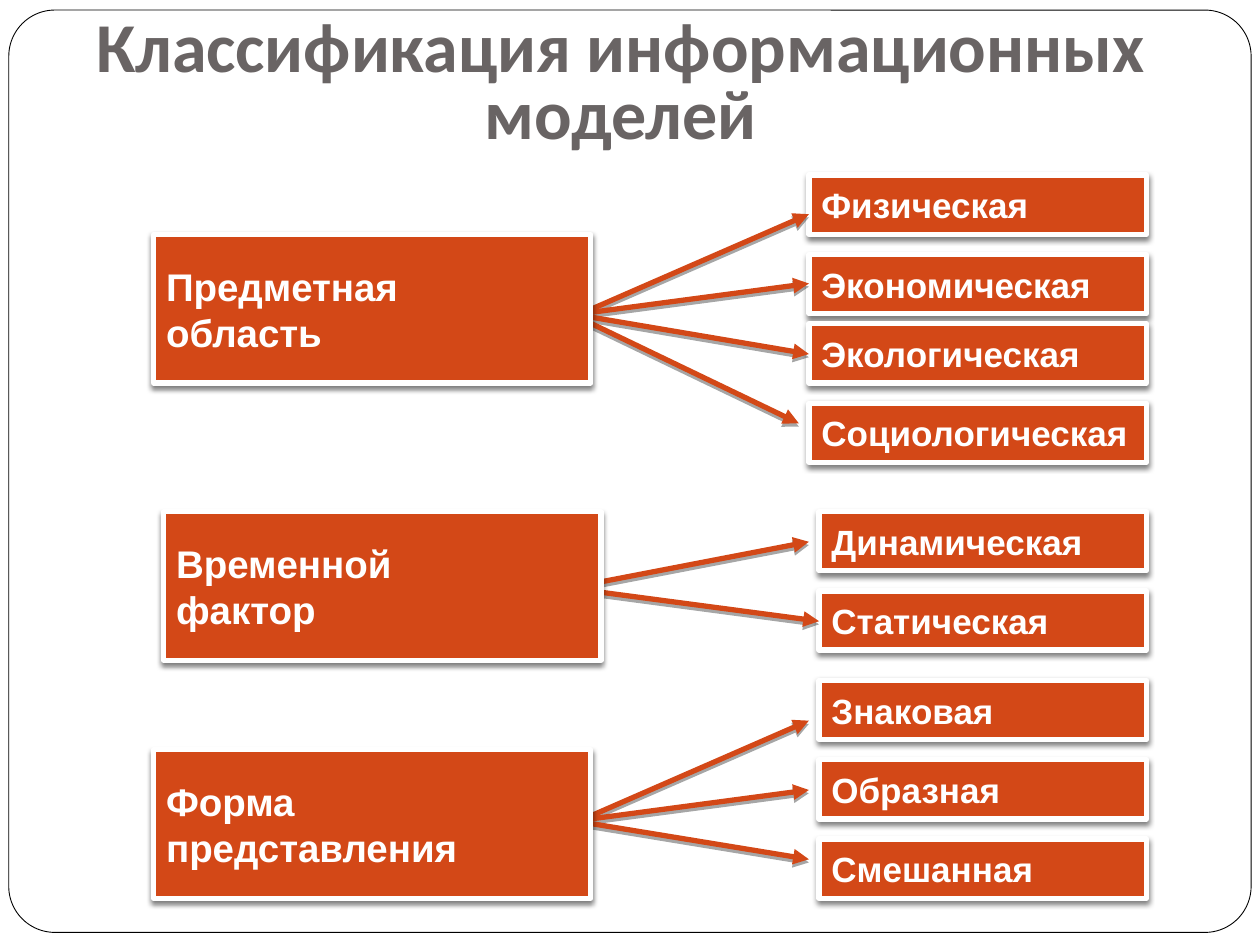
from dataclasses import dataclass

import pptx
import pptx.dml.color
import pptx.enum.shapes
import pptx.enum.text
import pptx.oxml
import pptx.oxml.ns
import pptx.util

Inches = pptx.util.Inches
Pt = pptx.util.Pt
RGBColor = pptx.dml.color.RGBColor
MSO_SHAPE = pptx.enum.shapes.MSO_SHAPE

ORANGE = RGBColor(0xD3, 0x48, 0x17)
WHITE = RGBColor(0xFF, 0xFF, 0xFF)
BLACK = RGBColor(0x00, 0x00, 0x00)
GRAY = RGBColor(0x69, 0x64, 0x64)

CATEGORY_WIDTH, CATEGORY_HEIGHT = 3.47, 1.18
MODEL_RIGHT, MODEL_HEIGHT = 9.1, 0.47


@dataclass(frozen=True)
class Model:
    name: str
    top: float
    arrow_tip: tuple[float, float]
    arrow_start: tuple[float, float]


@dataclass(frozen=True)
class Category:
    lines: tuple[str, ...]
    left: float
    top: float
    models_left: float
    models: tuple[Model, ...]


CATEGORIES = (
    Category(("Предметная", "область"), 1.22, 1.86, 6.42, (
        Model("Физическая", 1.39, (6.42, 1.7), (4.61, 2.49)),
        Model("Экономическая", 2.02, (6.42, 2.25), (4.61, 2.49)),
        Model("Экологическая", 2.57, (6.42, 2.81), (4.53, 2.49)),
        Model("Социологическая", 3.2, (6.34, 3.36), (4.53, 2.49)),
    )),
    Category(("Временной", "фактор"), 1.3, 4.06, 6.5, (
        Model("Динамическая", 4.06, (6.42, 4.3), (4.76, 4.62)),
        Model("Статическая", 4.69, (6.5, 4.93), (4.69, 4.69)),
    )),
    Category(("Форма", "представления"), 1.22, 5.95, 6.5, (
        Model("Знаковая", 5.4, (6.42, 5.72), (4.61, 6.51)),
        Model("Образная", 6.03, (6.42, 6.27), (4.61, 6.51)),
        Model("Смешанная", 6.66, (6.42, 6.82), (4.53, 6.51)),
    )),
)


def add_shadow(shape, blur: float, distance: float, opacity: int) -> None:
    namespace = pptx.oxml.ns.nsdecls("a")
    effects = pptx.oxml.parse_xml(
        f'<a:effectLst {namespace}><a:outerShdw blurRad="{Pt(blur)}" '
        f'dist="{Pt(distance)}" dir="5400000" rotWithShape="0">'
        f'<a:srgbClr val="{BLACK}"><a:alpha val="{opacity * 1000}"/></a:srgbClr>'
        "</a:outerShdw></a:effectLst>"
    )
    shape._element.spPr.append(effects)


def add_box(slide, lines: tuple[str, ...], left: float, top: float,
            width: float, height: float, size: int) -> None:
    box = slide.shapes.add_shape(
        MSO_SHAPE.RECTANGLE, Inches(left), Inches(top), Inches(width), Inches(height))
    box.fill.solid()
    box.fill.fore_color.rgb = ORANGE
    box.line.color.rgb = WHITE
    box.line.width = Pt(3)
    add_shadow(box, blur=3, distance=2, opacity=50)
    frame = box.text_frame
    frame.word_wrap = True
    frame.vertical_anchor = pptx.enum.text.MSO_ANCHOR.MIDDLE
    frame.text = "\n".join(lines)
    for paragraph in frame.paragraphs:
        paragraph.alignment = pptx.enum.text.PP_ALIGN.LEFT
        paragraph.font.name = "Arial"
        paragraph.font.size = Pt(size)
        paragraph.font.bold = True
        paragraph.font.color.rgb = WHITE


def add_arrow(slide, start: tuple[float, float], tip: tuple[float, float]) -> None:
    arrow = slide.shapes.add_connector(
        pptx.enum.shapes.MSO_CONNECTOR.STRAIGHT,
        *(Inches(value) for value in (*start, *tip)))
    arrow.line.color.rgb = ORANGE
    arrow.line.width = Pt(3)
    arrow.line._get_or_add_ln().append(pptx.oxml.parse_xml(
        f'<a:tailEnd {pptx.oxml.ns.nsdecls("a")} type="triangle"/>'))
    add_shadow(arrow, blur=0, distance=1.8, opacity=35)


def add_category(slide, category: Category) -> None:
    for model in category.models:
        add_box(slide, (model.name,), category.models_left, model.top,
                MODEL_RIGHT - category.models_left, MODEL_HEIGHT, 20)
    for model in category.models:
        add_arrow(slide, model.arrow_start, model.arrow_tip)
    add_box(slide, category.lines, category.left, category.top,
            CATEGORY_WIDTH, CATEGORY_HEIGHT, 22)


def add_border(slide) -> None:
    border = slide.shapes.add_shape(
        MSO_SHAPE.ROUNDED_RECTANGLE, Inches(0.07), Inches(0.08), Inches(9.86), Inches(7.32))
    border.adjustments[0] = 0.05
    border.fill.solid()
    border.fill.fore_color.rgb = WHITE
    border.line.color.rgb = BLACK
    border.line.width = Pt(0.5)
    border.shadow.inherit = False


def add_title(slide, text: str) -> None:
    title = slide.shapes.add_textbox(Inches(0.35), Inches(0.21), Inches(9.15), Inches(0.94))
    frame = title.text_frame
    frame.word_wrap = True
    frame.vertical_anchor = pptx.enum.text.MSO_ANCHOR.MIDDLE
    frame.text = text
    paragraph = frame.paragraphs[0]
    paragraph.alignment = pptx.enum.text.PP_ALIGN.CENTER
    paragraph.line_spacing = 0.8
    paragraph.font.name = "Calibri"
    paragraph.font.size = Pt(40)
    paragraph.font.bold = True
    paragraph.font.color.rgb = GRAY


def main() -> None:
    presentation = pptx.Presentation()
    presentation.slide_width = Inches(10)
    presentation.slide_height = Inches(7.5)
    slide = presentation.slides.add_slide(presentation.slide_layouts[6])
    add_border(slide)
    for category in CATEGORIES:
        add_category(slide, category)
    add_title(slide, "Классификация информационных моделей")
    presentation.save("out.pptx")


if __name__ == "__main__":
    main()
